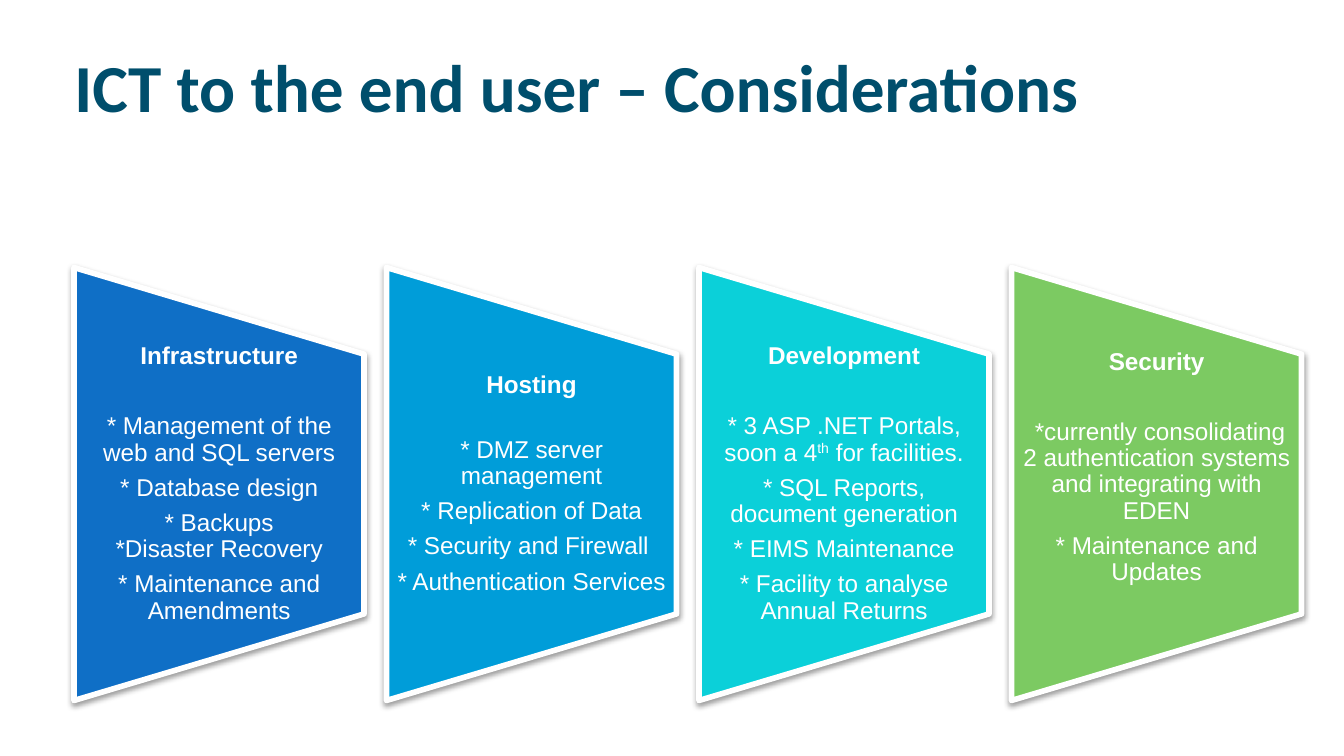
from copy import deepcopy
from lxml import etree
from pptx import Presentation
from pptx import util as u
from pptx.dml.color import RGBColor
from pptx.enum import shapes, text
from pptx.oxml.ns import qn

TITLE = "ICT to the end user – Considerations"
PANELS = [
    {"name": "Infrastructure", "fill": "0F6FC6", "gap": 23.5, "bottom": 0, "items": [
        ["* Management of the web and SQL servers"],
        ["* Database design"],
        ["* Backups", "\n", "*Disaster Recovery"],
        ["* Maintenance and Amendments"]]},
    {"name": "Hosting", "fill": "009DD9", "gap": 20.5, "bottom": 0, "items": [
        ["* DMZ server management"],
        ["* Replication of Data"],
        ["* Security and Firewall "],
        ["* Authentication Services"]]},
    {"name": "Development", "fill": "0BD0D9", "gap": 23.5, "bottom": 0, "items": [
        ["* 3 ASP .NET Portals, soon a 4", "^th", " for facilities."],
        ["* SQL Reports, document generation"],
        ["* EIMS Maintenance"],
        ["* Facility to analyse Annual Returns"]]},
    {"name": "Security", "fill": "7CCA62", "gap": 23.5, "bottom": 33, "items": [
        [" *currently consolidating 2 authentication systems and integrating with EDEN"],
        ["* Maintenance and Updates"]]},
]

WIDTH, HEIGHT = 1344, 756
LEFT, MIDDLE = 74, 484
PANEL_W, PANEL_H, TEXT_H = 290, 433, 259
PITCH = 312.5
ITEM_GAP = 4.8
WHITE = "FFFFFF"


def px(n):
    return u.Emu(round(n * 914400 / 134.4))


def rgb(c):
    return RGBColor.from_string(c)


def style(r, size, font, color, bold):
    f = r.font
    f.size, f.name, f.bold = u.Pt(size), font, bold
    f.color.rgb = rgb(color)


def add_shadow(sp):
    effects = etree.SubElement(sp._element.spPr, qn("a:effectLst"))
    shadow = etree.SubElement(effects, qn("a:outerShdw"), blurRad=str(u.Pt(3.1)),
                              dist=str(u.Pt(1.6)), dir="5400000", rotWithShape="0")
    color = etree.SubElement(shadow, qn("a:srgbClr"), val="000000")
    etree.SubElement(color, qn("a:alpha"), val="38000")


def add_paragraph(p, parts, gap, bold=False):
    p.alignment = text.PP_ALIGN.CENTER
    p.line_spacing = 0.9
    p.space_after = u.Pt(gap)
    for part in parts:
        if part == "\n":
            p.add_line_break()
            p._p[-1].append(deepcopy(r._r.rPr))
            continue
        r = p.add_run()
        r.text = part.lstrip("^")
        style(r, 13, "Arial", WHITE, bold)
        if part.startswith("^"):
            r._r.rPr.set("baseline", "30000")


def add_panel(group, panel, left):
    sp = group.shapes.add_shape(
        shapes.MSO_SHAPE.FLOWCHART_MANUAL_OPERATION,
        px(left + (PANEL_W - PANEL_H) / 2), px(MIDDLE - PANEL_W / 2), px(PANEL_H), px(PANEL_W))
    sp.rotation = 270
    sp.fill.solid()
    sp.fill.fore_color.rgb = rgb(panel["fill"])
    sp.line.color.rgb = rgb(WHITE)
    sp.line.width = u.Pt(3)
    add_shadow(sp)

    box = group.shapes.add_textbox(px(left), px(MIDDLE - TEXT_H / 2), px(PANEL_W), px(TEXT_H))
    tf = box.text_frame
    tf.word_wrap = True
    tf.vertical_anchor = text.MSO_ANCHOR.MIDDLE
    tf.margin_left = tf.margin_right = px(11)
    tf.margin_top, tf.margin_bottom = 0, px(panel["bottom"])
    add_paragraph(tf.paragraphs[0], [panel["name"]], panel["gap"], True)
    for item in panel["items"]:
        add_paragraph(tf.add_paragraph(), item, ITEM_GAP)


prs = Presentation()
prs.slide_width, prs.slide_height = px(WIDTH), px(HEIGHT)
s = prs.slides.add_slide(prs.slide_layouts[5])

title = s.shapes.title
title.left, title.top, title.width, title.height = px(61), px(51), px(1210), px(70)
tf = title.text_frame
tf.auto_size = text.MSO_AUTO_SIZE.NONE
tf.vertical_anchor = text.MSO_ANCHOR.MIDDLE
p = tf.paragraphs[0]
p.alignment = text.PP_ALIGN.LEFT
r = p.add_run()
r.text = TITLE
style(r, 36, "Calibri", "004E6C", True)

group = s.shapes.add_group_shape()
for i, panel in enumerate(PANELS):
    add_panel(group, panel, LEFT + i * PITCH)

prs.save("out.pptx")
